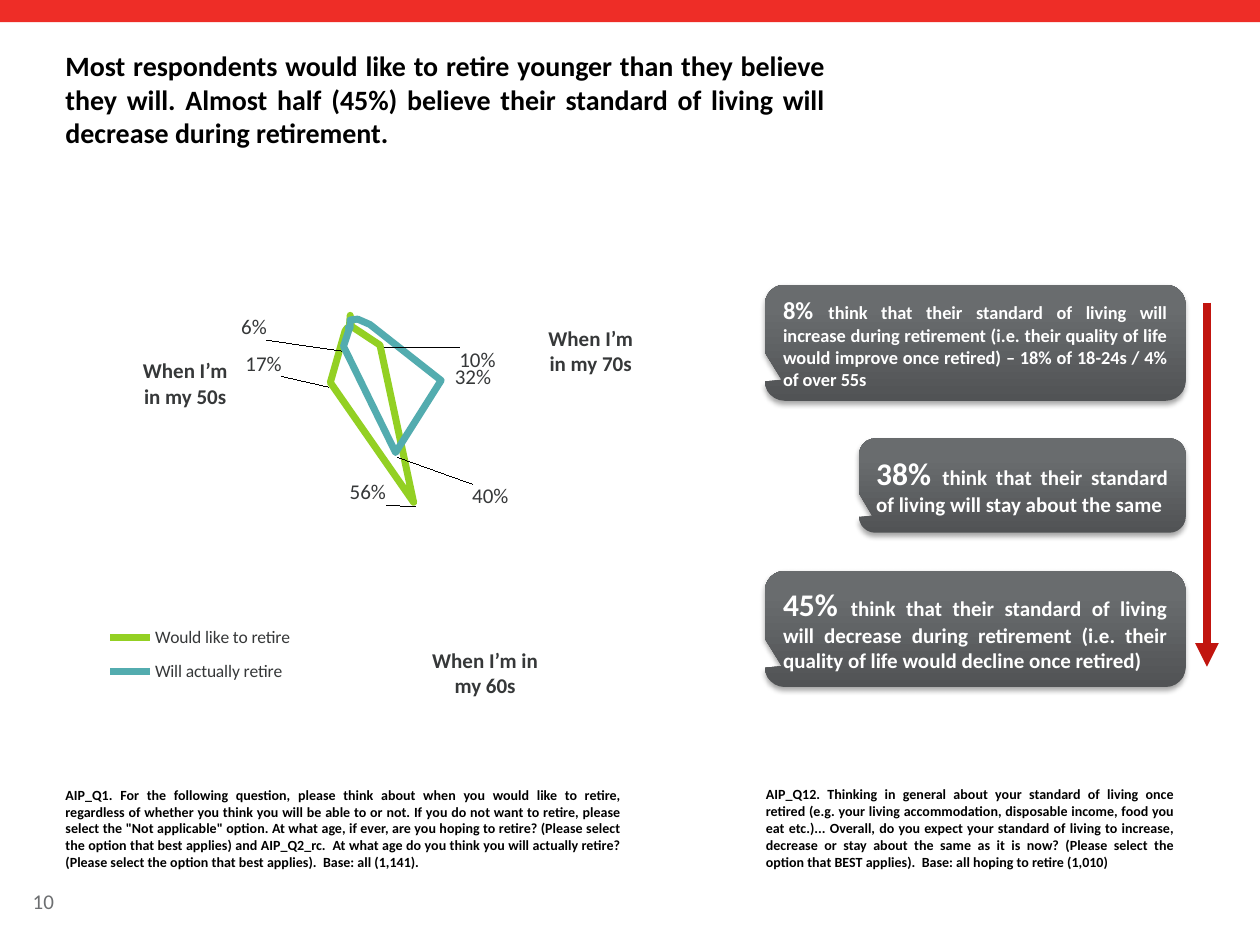
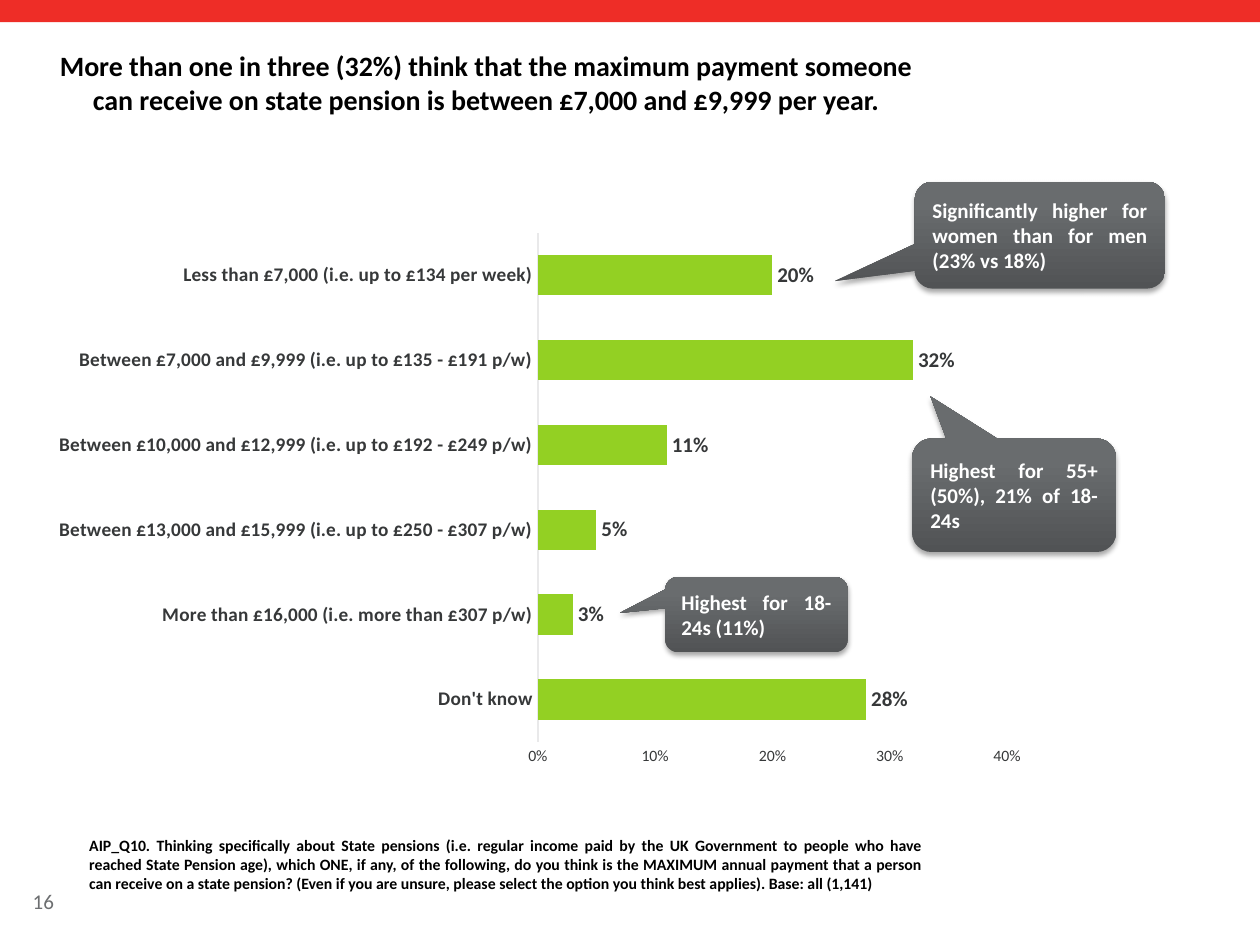
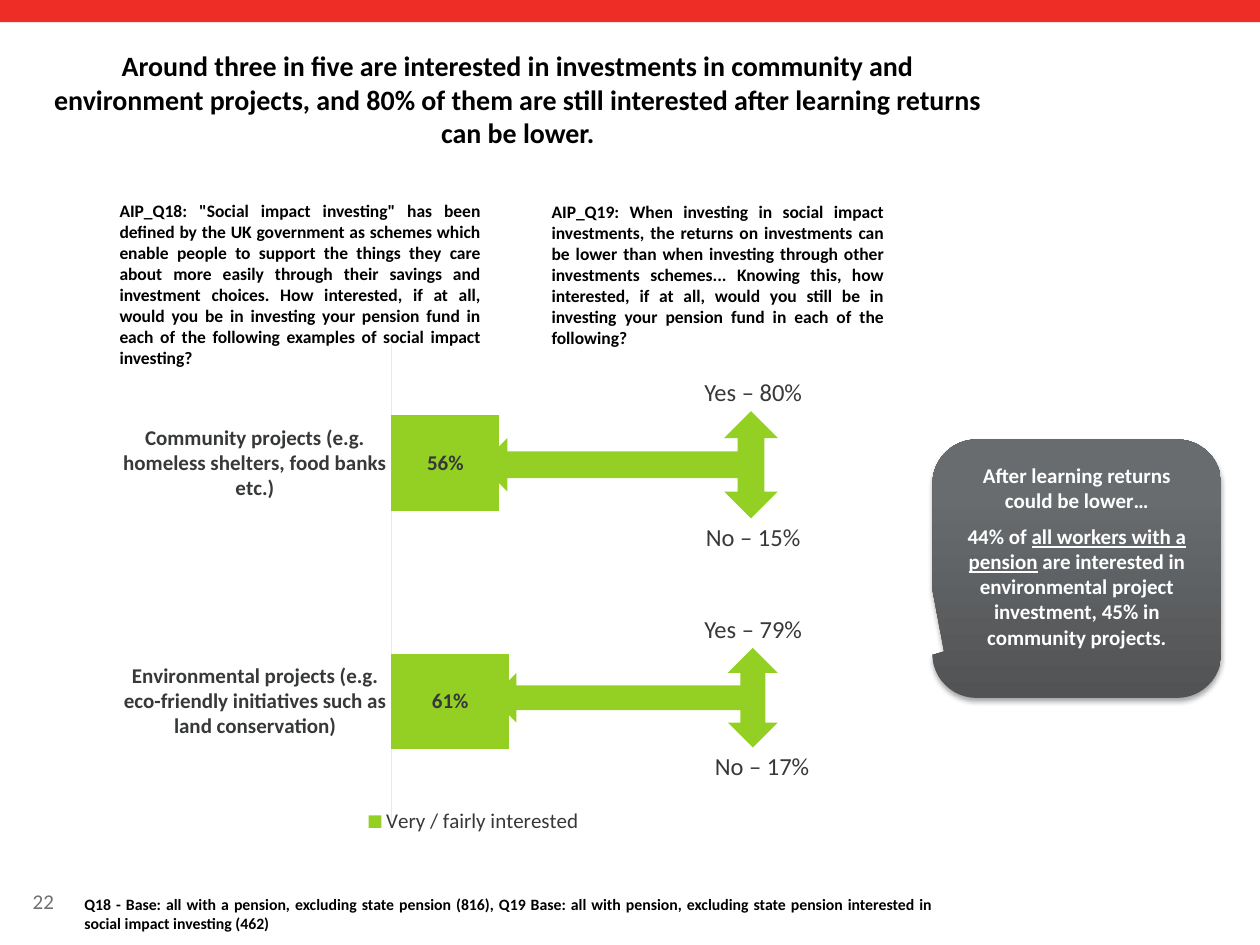
from dataclasses import dataclass

from lxml import etree
from pptx import Presentation
from pptx.chart.data import CategoryChartData
from pptx.dml.color import RGBColor
from pptx.enum.chart import (XL_CHART_TYPE, XL_LABEL_POSITION,
                             XL_LEGEND_POSITION, XL_TICK_MARK)
from pptx.enum.shapes import MSO_CONNECTOR, MSO_SHAPE
from pptx.enum.text import MSO_ANCHOR, PP_ALIGN
from pptx.oxml import parse_xml
from pptx.oxml.ns import nsdecls, qn
from pptx.util import Cm, Pt

LEFT, MID, JUST = PP_ALIGN.LEFT, PP_ALIGN.CENTER, PP_ALIGN.JUSTIFY
TOP, MIDDLE = MSO_ANCHOR.TOP, MSO_ANCHOR.MIDDLE
RADAR, BAR, STACK = (XL_CHART_TYPE.RADAR, XL_CHART_TYPE.BAR_CLUSTERED,
                     XL_CHART_TYPE.BAR_STACKED)
OUT, NO_TICK = XL_LABEL_POSITION.OUTSIDE_END, XL_TICK_MARK.NONE
RIGHT, BOTTOM = XL_LEGEND_POSITION.RIGHT, XL_LEGEND_POSITION.BOTTOM
RECT, CALLOUT, FORK = (MSO_SHAPE.RECTANGLE, MSO_SHAPE.ROUNDED_RECTANGULAR_CALLOUT,
                       MSO_SHAPE.LEFT_RIGHT_UP_ARROW)
LINE = MSO_CONNECTOR.STRAIGHT


@dataclass(frozen=True)
class Theme:
    font: str = "Calibri"
    red: str = "EE2D27"
    arrow: str = "C1150F"
    green: str = "93D023"
    teal: str = "53ACAF"
    ink: str = "000000"
    text: str = "363839"
    grey: str = "6D6F71"
    rule: str = "E9E9EA"
    white: str = "FFFFFF"
    dark: str = "515355"
    light: str = "696C6E"
    title: float = 16
    big: float = 18
    lead: float = 14
    body: float = 12
    label: float = 11
    small: float = 10.5
    quest: float = 10
    base: float = 9
    note: float = 8


T = Theme()


def rgb(code):
    return RGBColor.from_string(code)


def cm(*vals):
    return [Cm(v) for v in vals]


def put(obj, **vals):
    for name, val in vals.items():
        setattr(obj, name, val)


def style(font, size, color, bold=False, **more):
    put(font, name=T.font, size=Pt(size), bold=bold, **more)
    font.color.rgb = rgb(color)


def write(frame, paras, color, bold, align, anchor, gap=0):
    """Fill a frame; each paragraph is a list of (text, size, underline)."""
    put(frame, word_wrap=True, vertical_anchor=anchor)
    for i, runs in enumerate(paras):
        para = frame.add_paragraph() if i else frame.paragraphs[0]
        para.alignment = align
        if i:
            para.space_before = Pt(gap)
        for text, size, under in runs:
            run = para.add_run()
            run.text = text
            style(run.font, size, color, bold, underline=under)


def text(slide, box, words, size, color=T.ink, bold=True, align=JUST, anchor=TOP):
    frame = slide.shapes.add_textbox(*cm(*box)).text_frame
    write(frame, [[(words, size, False)]], color, bold, align, anchor)


def solid(slide, kind, box, color):
    shape = slide.shapes.add_shape(kind, *cm(*box))
    shape.shadow.inherit = False
    shape.fill.solid()
    shape.fill.fore_color.rgb = rgb(color)
    shape.line.fill.background()
    return shape


def callout(slide, box, paras, tip=(-0.46, 0.32), align=JUST, gap=0):
    shape = solid(slide, CALLOUT, box, T.dark)
    for i, val in enumerate((*tip, 0.17)):
        shape.adjustments[i] = val
    shape.fill.gradient()
    shape.fill.gradient_angle = 90
    for stop, color, pos in zip(shape.fill.gradient_stops, (T.dark, T.light), (0, 0.8)):
        stop.color.rgb = rgb(color)
        stop.position = pos
    shape.element.spPr.find(qn("a:effectLst")).append(parse_xml(
        f'<a:outerShdw {nsdecls("a")} blurRad="{Pt(3.1)}" dist="{Pt(1.8)}" '
        'dir="5400000" rotWithShape="0"><a:srgbClr val="000000">'
        '<a:alpha val="35000"/></a:srgbClr></a:outerShdw>'))
    write(shape.text_frame, paras, T.white, True, align, MIDDLE, gap)
    return shape


def arrow(slide, start, end):
    line = slide.shapes.add_connector(LINE, *cm(*start, *end))
    line.line.color.rgb = rgb(T.arrow)
    line.line.width = Pt(4.5)
    etree.SubElement(line.line._get_or_add_ln(), qn("a:tailEnd"), type="triangle")
    etree.SubElement(line._element.spPr, qn("a:effectLst"))


def frame(slide, box, title, number, align=MID):
    """Add the band, title and slide number that all slides share."""
    solid(slide, RECT, (0, 0, 25.4, 0.45), T.red)
    text(slide, box, title, T.title, align=align)
    text(slide, (0.41, 17.65, 5.72, 1.02), number, T.body, T.grey, False, LEFT, MIDDLE)


def layout(parent, index, inner=False, **vals):
    """Set a manual chart layout on an element, as fractions of the chart."""
    for old in parent.findall(qn("c:layout")):
        parent.remove(old)
    node = etree.Element(qn("c:layout"))
    man = etree.SubElement(node, qn("c:manualLayout"))
    if inner:
        etree.SubElement(man, qn("c:layoutTarget"), val="inner")
    if "w" in vals:
        for name in ("xMode", "yMode"):
            etree.SubElement(man, qn("c:" + name), val="edge")
    for name, val in vals.items():
        etree.SubElement(man, qn("c:" + name), val=str(val))
    parent.insert(index, node)


def graph(slide, box, kind, cats, series, color):
    data = CategoryChartData(number_format="0%")
    data.categories = cats
    for name, vals in series:
        data.add_series(name, vals)
    chart = slide.shapes.add_chart(kind, *cm(*box), data).chart
    put(chart, has_title=False, has_legend=False)
    style(chart.font, T.quest, color)
    chart.value_axis.has_major_gridlines = False
    chart.category_axis.has_major_gridlines = False
    return chart


def legend(chart, pos, size, **place):
    chart.has_legend = True
    put(chart.legend, position=pos, include_in_layout=False)
    style(chart.legend.font, size, T.text)
    layout(chart.legend._element, 1, **place)


def leaders(series, spots):
    """Label some points, each moved by (x, y) and tied by a leader line."""
    labels = series.data_labels
    labels.show_value = False
    for index, (x, y) in spots.items():
        style(series.points[index].data_label.font, T.body, T.text)
        node = labels._element.xpath(f"c:dLbl[c:idx/@val={index}]")[0]
        layout(node, 1, x=x, y=y)
    labels._element.append(parse_xml(
        f'<c:extLst {nsdecls("c")}><c:ext uri="{{CE6537A1-D6FC-4f65-9D91-7224C49458BB}}" '
        'xmlns:c15="http://schemas.microsoft.com/office/drawing/2012/chart">'
        '<c15:showLeaderLines val="1"/></c:ext></c:extLst>'))


def radar(slide, box):
    wish = (0.0379, 0.0053, 0.0091, 0.1034, 0.5574, 0.1744, 0.0178, 0.008, 0.0038)
    real = (0.0241, 0.0348, 0.0602, 0.3155, 0.3985, 0.0587, 0.0028, 0.0057, 0)
    chart = graph(slide, box, RADAR, [str(n) for n in range(1, 10)],
                  [("Would like to retire", wish), ("Will actually retire", real)], T.grey)
    put(chart.value_axis, visible=False, minimum_scale=0, maximum_scale=1)
    chart.category_axis.visible = False
    legend(chart, RIGHT, T.quest, x=0.18, y=0.77, w=0.21, h=0.09)
    layout(chart._chartSpace.chart.plotArea, 0, True, x=0.09, y=0.01, w=0.71, h=0.88)
    spots = ({3: (0.08, 0), 4: (-0.07, -0.03), 5: (-0.05, -0.04)},
             {3: (0.01, -0.02), 4: (0.08, 0.03), 5: (-0.08, -0.04)})
    for series, color, spot in zip(chart.plots[0].series, (T.green, T.teal), spots):
        series.format.line.color.rgb = rgb(color)
        series.format.line.width = Pt(4)
        leaders(series, spot)
    left, top = box[:2]
    for age, x, y, wide in ((70, 11.99, 7.93, 2.54), (60, 9.78, 14.43, 2.7),
                            (50, 3.84, 8.59, 2.49)):
        text(slide, (left + x, top + y, wide, 1.27), f"When I’m in my {age}s",
             T.body, T.text, align=MID, anchor=MIDDLE)


def bars(chart, gap, size, cat):
    """Style the bars, their labels and the category axis."""
    plot = chart.plots[0]
    put(plot, gap_width=gap, vary_by_categories=False, has_data_labels=True)
    fill = plot.series[0].format.fill
    fill.solid()
    fill.fore_color.rgb = rgb(T.green)
    put(plot.data_labels, show_value=True, number_format="0%",
        number_format_is_linked=False)
    style(plot.data_labels.font, size, T.text, True)
    axis = chart.category_axis
    put(axis, major_tick_mark=NO_TICK, minor_tick_mark=NO_TICK)
    style(axis.tick_labels.font, cat, T.text, True)
    axis.format.line.color.rgb = rgb(T.rule)
    axis.format.line.width = Pt(0.75)


def pay(slide, box):
    cats = ["Don't know", "More than £16,000 (i.e. more than £307 p/w)",
            "Between £13,000 and £15,999 (i.e. up to £250 - £307 p/w)",
            "Between £10,000 and £12,999 (i.e. up to £192 - £249 p/w)",
            "Between £7,000 and £9,999 (i.e. up to £135 - £191 p/w)",
            "Less than £7,000 (i.e. up to £134 per week)"]
    chart = graph(slide, box, BAR, cats,
                  [("Series 1", (0.28, 0.03, 0.05, 0.11, 0.32, 0.2))], T.grey)
    bars(chart, 110, T.body, T.label)
    chart.plots[0].data_labels.position = OUT
    axis = chart.value_axis
    put(axis, minimum_scale=0, maximum_scale=0.4, major_unit=0.1,
        major_tick_mark=NO_TICK, minor_tick_mark=NO_TICK)
    put(axis.tick_labels, number_format="0%", number_format_is_linked=False)
    style(axis.tick_labels.font, T.base, T.text)
    axis.format.line.fill.background()


def impact(slide, box):
    cats = ["Environmental projects (e.g. eco-friendly initiatives such as land conservation)",
            "Community projects (e.g. homeless shelters, food banks etc.)"]
    chart = graph(slide, box, STACK, cats,
                  [("Very / fairly interested", (0.61, 0.56))], T.text)
    bars(chart, 150, T.body, T.body)
    chart.plots[0].overlap = 100
    put(chart.value_axis, visible=False, minimum_scale=0, maximum_scale=1, major_unit=0.2)
    legend(chart, BOTTOM, T.body, x=0.52, y=0.87, w=0.46, h=0.06)


def fork(slide, box, yes, no, shift=0):
    """Point an arrow back at a bar, with the two answers at its right end."""
    left, top, wide, high = box
    turn = (wide - high) / 2
    shape = solid(slide, FORK, (left + turn, top - turn, high, wide), T.green)
    shape.rotation = 270
    edge = left + wide - 1.84
    for words, x, y in ((f"Yes – {yes}%", edge, top - 0.82),
                        (f"No – {no}%", edge + shift, top + high - 0.06)):
        text(slide, (x, y, 2.69, 0.86), words, T.lead, T.text, False, MID, MIDDLE)


def living(slide, box):
    """Stack the three views on living standards beside a falling arrow."""
    left, top, wide, high = box
    views = (
        (0, 0, 2.34, "8% ", T.lead, T.small,
         "think that their standard of living will increase during retirement (i.e. their "
         "quality of life would improve once retired) – 18% of 18-24s / 4% of over 55s"),
        (1.9, 3.1, 1.9, "38% ", T.big, T.body,
         "think that their standard of living will stay about the same"),
        (0, 5.77, 2.34, "45% ", T.big, T.body,
         "think that their standard of living will decrease during retirement (i.e. their "
         "quality of life would decline once retired)"))
    for x, y, tall, share, large, size, words in views:
        callout(slide, (left + x, top + y, wide - x, tall),
                [[(share, large, False), (words, size, False)]])
    x = left + wide + 0.43
    arrow(slide, (x, top + 0.36), (x, top + high - 0.41))


def retire(slide):
    radar(slide, (-1.35, -1.5, 18.9, 18.03))
    frame(slide, (1.07, 0.86, 15.82, 3.23),
          "Most respondents would like to retire younger than they believe they will. Almost "
          "half (45%) believe their standard of living will decrease during retirement.",
          "10", JUST)
    text(slide, (1.07, 15.72, 11.71, 1.96),
         "AIP_Q1. For the following question, please think about when you would like to "
         "retire, regardless of whether you think you will be able to or not. If you do not "
         'want to retire, please select the "Not applicable" option. At what age, if ever, '
         "are you hoping to retire? (Please select the option that best applies) and "
         "AIP_Q2_rc.  At what age do you think you will actually retire? (Please select the "
         "option that best applies).  Base: all (1,141).", T.note, anchor=MIDDLE)
    text(slide, (15.19, 15.72, 8.74, 1.96),
         "AIP_Q12. Thinking in general about your standard of living once retired (e.g. your "
         "living accommodation, disposable income, food you eat etc.)... Overall, do you "
         "expect your standard of living to increase, decrease or stay about the same as it "
         "is now? (Please select the option that BEST applies).  Base: all hoping to retire "
         "(1,010)", T.note)
    living(slide, (15.42, 5.74, 8.48, 8.11))


def pension(slide):
    pay(slide, (0.79, 4.47, 20.19, 11.18))
    frame(slide, (0.79, 0.86, 18.03, 2.79),
          "More than one in three (32%) think that the maximum payment someone can receive on "
          "state pension is between £7,000 and £9,999 per year.", "16")
    text(slide, (1.55, 16.71, 17.27, 1.42),
         "AIP_Q10. Thinking specifically about State pensions (i.e. regular income paid by "
         "the UK Government to people who have reached State Pension age), which ONE, if any, "
         "of the following, do you think is the MAXIMUM annual payment that a person can "
         "receive on a state pension? (Even if you are unsure, please select the option you "
         "think best applies). Base: all (1,141)", T.base, anchor=MIDDLE)
    for box, tip, words in (
            ((13.41, 11.63, 3.68, 1.52), (-0.75, -0.02), "Highest for 18-24s (11%)"),
            ((18.44, 3.66, 5.05, 2.16), (-0.82, 0.43),
             "Significantly higher for women than for men (23% vs 18%)"),
            ((18.39, 8.84, 4.11, 2.29), (-0.41, -0.87),
             "Highest for 55+ (50%), 21% of 18-24s")):
        callout(slide, box, [[(words, T.body, False)]], tip)


def invest(slide):
    impact(slide, (2.29, 6.71, 9.68, 10.95))
    frame(slide, (0.79, 0.86, 19.3, 2.44),
          "Around three in five are interested in investments in community and environment "
          "projects, and 80% of them are still interested after learning returns can be "
          "lower.", "22")
    text(slide, (10.87, 3.91, 7.19, 3.25),
         "AIP_Q19: When investing in social impact investments, the returns on investments "
         "can be lower than when investing through other investments schemes... Knowing this, "
         "how interested, if at all, would you still be in investing your pension fund in "
         "each of the following?", T.quest, anchor=MIDDLE)
    text(slide, (2.16, 3.91, 7.77, 3.68),
         'AIP_Q18: "Social impact investing" has been defined by the UK government as schemes '
         "which enable people to support the things they care about more easily through their "
         "savings and investment choices. How interested, if at all, would you be in "
         "investing your pension fund in each of the following examples of social impact "
         "investing?", T.quest)
    fork(slide, (9.69, 8.29, 5.99, 2.16), 80, 15)
    fork(slide, (9.91, 13.06, 5.77, 2.01), 79, 17, 0.18)
    shape = callout(slide, (18.8, 8.86, 5.82, 5.21), [
        [("After learning returns could be lower…", T.body, False)],
        [("44% of ", T.body, False), ("all workers with a pension", T.body, True),
         (" are interested in environmental project investment, 45% in community projects.",
          T.body, False)]], align=MID, gap=6)
    shape.text_frame.margin_bottom = Cm(0.64)
    text(slide, (1.45, 17.91, 17.58, 1.02),
         "Q18 - Base: all with a pension, excluding state pension (816), Q19 Base: all with "
         "pension, excluding state pension interested in social impact investing (462)",
         T.base)


def main():
    deck = Presentation()
    put(deck, slide_width=Cm(25.4), slide_height=Cm(19.05))
    for build in (retire, pension, invest):
        build(deck.slides.add_slide(deck.slide_layouts[6]))
    deck.save("out.pptx")


if __name__ == "__main__":
    main()
